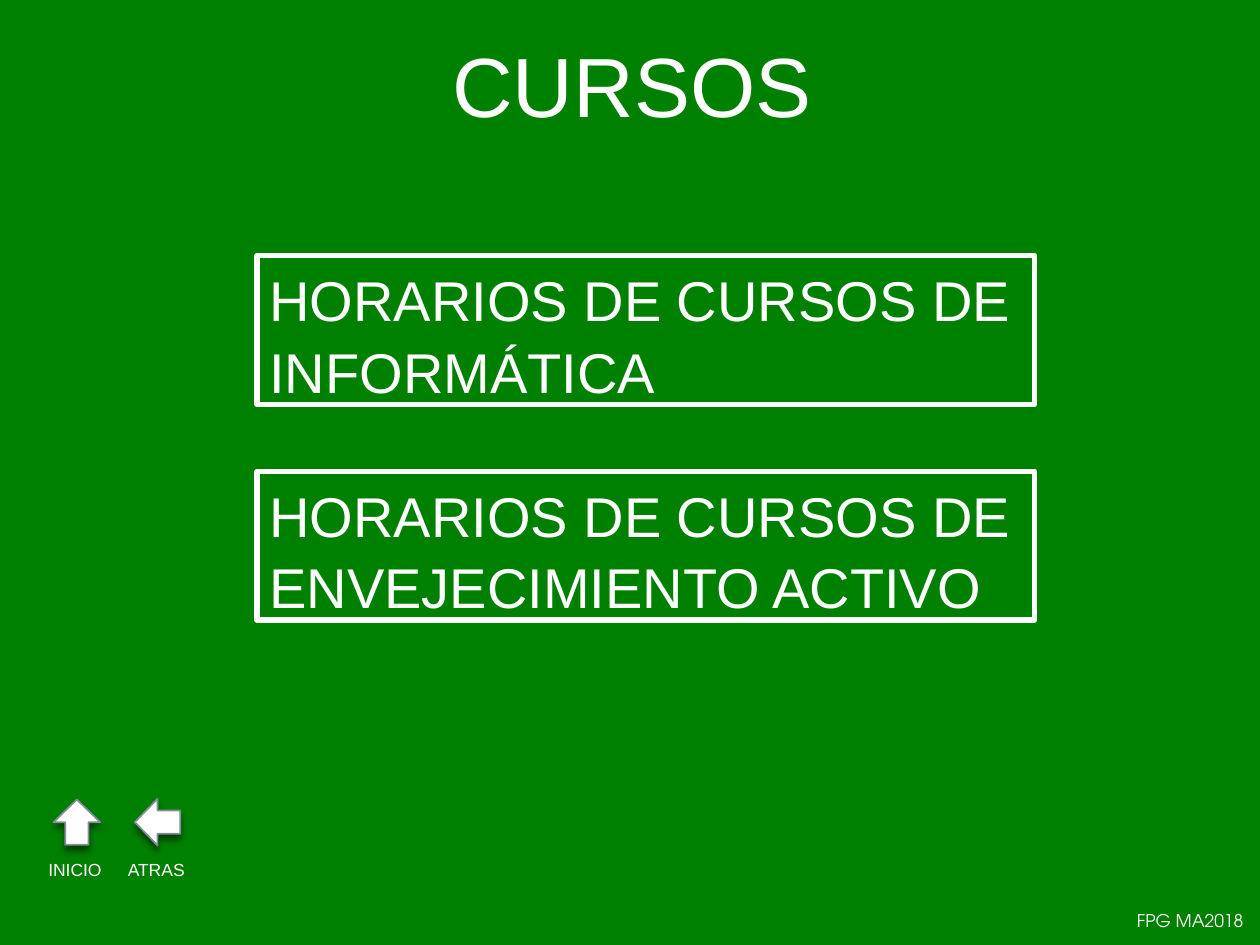
import lxml.etree
import pptx
import pptx.dml.color
import pptx.enum.shapes
import pptx.enum.text
import pptx.oxml.ns
import pptx.util

Inches = pptx.util.Inches
Pt = pptx.util.Pt
ALIGN = pptx.enum.text.PP_ALIGN
COLORS = {"green": "008000", "white": "FFFFFF", "edge": "838D9B", "shadow": "000000"}


class CourseSlide:
    """Draws the elements of the course menu in one shared style."""

    def __init__(self, deck):
        self.slide = deck.slides.add_slide(deck.slide_layouts[5])
        self.shapes = self.slide.shapes
        self.paint(self.slide.background.fill, "green")

    def paint(self, fill, color):
        fill.solid()
        fill.fore_color.rgb = pptx.dml.color.RGBColor.from_string(COLORS[color])

    def outline(self, shape, color, width):
        self.paint(shape.line.fill, color)
        shape.line.width = Pt(width)

    def add_text(self, shape, text, size, align, font="Arial", spacing=1.06, wrap=True):
        frame = shape.text_frame
        frame.word_wrap = wrap
        frame.vertical_anchor = pptx.enum.text.MSO_ANCHOR.TOP
        paragraph = frame.paragraphs[0]
        paragraph.alignment = align
        paragraph.line_spacing = spacing
        run = paragraph.add_run()
        run.text = text
        run.font.name = font
        run.font.size = Pt(size)
        self.paint(run.font.fill, "white")

    def title(self, text, left, top, width, height):
        heading = self.shapes.title
        heading.left, heading.top = Inches(left), Inches(top)
        heading.width, heading.height = Inches(width), Inches(height)
        self.paint(heading.fill, "green")
        self.add_text(heading, text, 48, ALIGN.CENTER)

    def menu_box(self, text, left, top, width, height):
        box = self.shapes.add_shape(
            pptx.enum.shapes.MSO_SHAPE.RECTANGLE,
            Inches(left), Inches(top), Inches(width), Inches(height))
        box.shadow.inherit = False
        box.fill.background()
        self.outline(box, "white", 3)
        self.add_text(box, text, 32, ALIGN.LEFT)

    def arrow(self, left, top, rotation):
        arrow = self.shapes.add_shape(
            pptx.enum.shapes.MSO_SHAPE.RIGHT_ARROW,
            Inches(left), Inches(top), Inches(0.36), Inches(0.37))
        arrow.rotation = rotation
        self.paint(arrow.fill, "white")
        self.outline(arrow, "edge", 1)
        self.drop_shadow(arrow)

    def drop_shadow(self, shape):
        shape.shadow.inherit = False
        qn = pptx.oxml.ns.qn
        effects = shape.element.spPr.find(qn("a:effectLst"))
        shadow = lxml.etree.SubElement(
            effects, qn("a:outerShdw"), blurRad=str(Pt(3.8)), dist=str(Pt(3)),
            dir="5400000", rotWithShape="0")
        color = lxml.etree.SubElement(shadow, qn("a:srgbClr"), val=COLORS["shadow"])
        lxml.etree.SubElement(color, qn("a:alpha"), val="48000")

    def label(self, text, left, top, width, **style):
        label = self.shapes.add_textbox(
            Inches(left), Inches(top), Inches(width), Inches(0.27))
        self.add_text(label, text, 10, ALIGN.CENTER, **style)


def main():
    deck = pptx.Presentation()
    deck.slide_width, deck.slide_height = Inches(10), Inches(7.5)
    menu = CourseSlide(deck)
    menu.title("CURSOS", 0.03, 0.17, 9.97, 0.91)
    menu.label("FPG MA2018", 8.89, 7.17, 1.11, font="TeX Gyre Adventor", spacing=1)

    courses = ["INFORMÁTICA", "ENVEJECIMIENTO ACTIVO"]
    for row, course in enumerate(courses):
        menu.menu_box(f"HORARIOS DE CURSOS DE {course}", 2.04, 2.03 + 1.71 * row, 6.17, 1.18)

    navigation = [("INICIO", 0.43, 270, 0.28, 0.63), ("ATRAS", 1.07, 180, 0.91, 0.66)]
    for name, arrow_left, rotation, label_left, label_width in navigation:
        menu.arrow(arrow_left, 6.34, rotation)
        menu.label(name, label_left, 6.76, label_width, wrap=False)

    deck.save("out.pptx")


if __name__ == "__main__":
    main()
